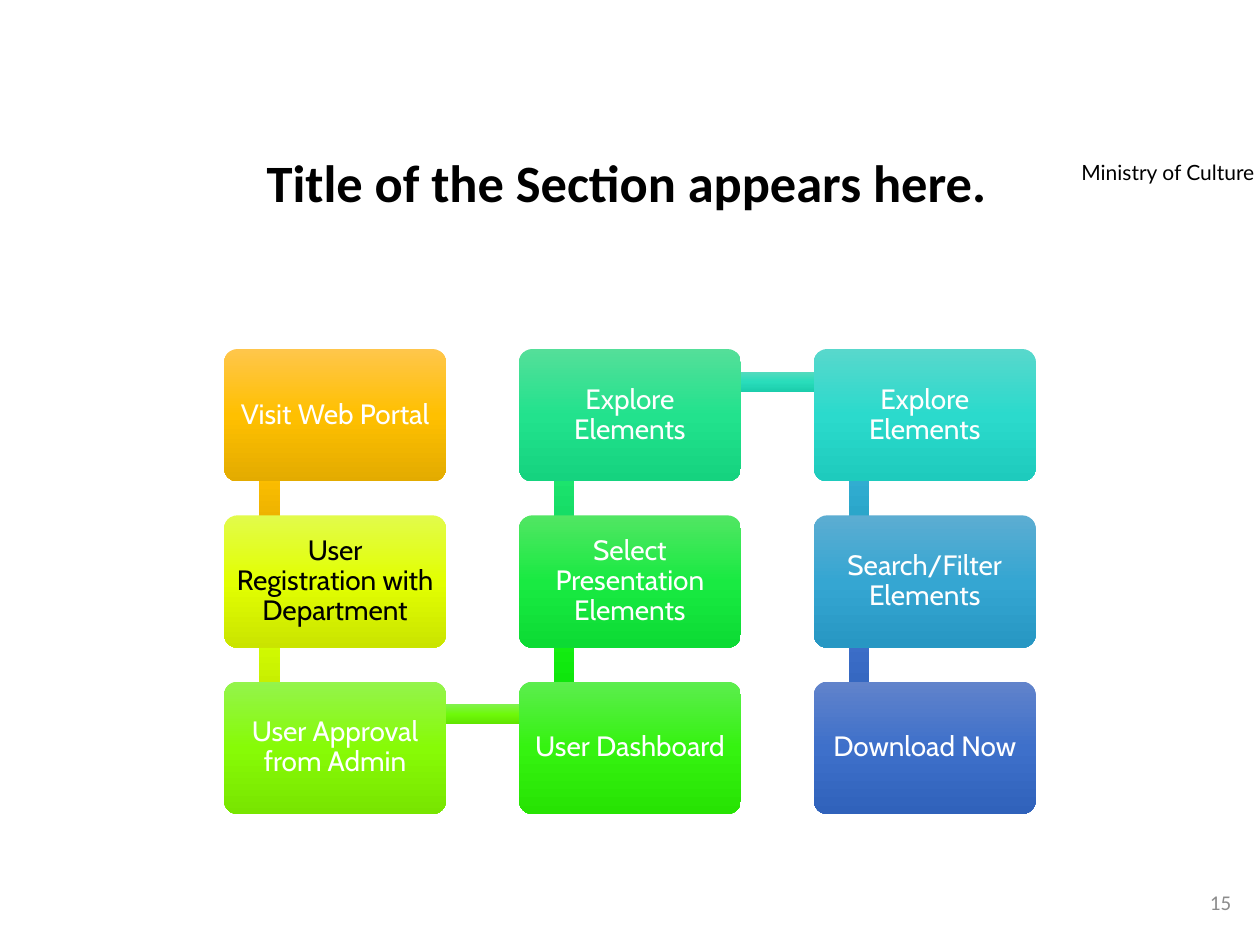
import copy
from dataclasses import dataclass

import pptx
import pptx.dml.color
import pptx.enum.shapes
import pptx.enum.text
import pptx.util

Inches = pptx.util.Inches
Align = pptx.enum.text.PP_ALIGN
Anchor = pptx.enum.text.MSO_ANCHOR
Shape = pptx.enum.shapes.MSO_SHAPE


@dataclass(frozen=True)
class Theme:
    heading_font: str = "Calibri"
    header_font: str = "Lato"
    step_font: str = "Cabin"
    heading_size: int = 30
    step_size: int = 16
    small_size: int = 12
    dark: str = "000000"
    light: str = "FFFFFF"
    muted: str = "8C8C8C"


THEME = Theme()

# Step grid, in inches
GRID_LEFT, GRID_TOP = 1.78, 2.77
COLUMN_PITCH, ROW_PITCH = 2.34, 1.32
STEP_WIDTH, STEP_HEIGHT = 1.76, 1.05
ROWS = 3
BAR_THICKNESS = 0.16

# Label, text colour, gradient from top to bottom
STEPS = [
    ("Visit Web Portal", THEME.light, ("FFC64B", "FFC000", "E3AB00")),
    ("User Registration with Department", THEME.dark, ("E2FB4B", "E2FF01", "CAE400")),
    ("User Approval from Admin", THEME.light, ("94F44C", "87FB06", "78E500")),
    ("User Dashboard", THEME.light, ("5CED4E", "35F310", "27E303")),
    ("Select Presentation Elements", THEME.light, ("51E663", "19EA42", "0CDB34")),
    ("Explore Elements", THEME.light, ("54DF99", "22E28D", "15D37F")),
    ("Explore Elements", THEME.light, ("58D8CC", "2BDACC", "1ECBBD")),
    ("Search/Filter Elements", THEME.light, ("5CADD2", "35A6D2", "2797C3")),
    ("Download Now", THEME.light, ("6183CB", "3E70CA", "3062BB")),
]
BAR_GRADIENTS = [
    ("FFC64B", "FFC000", "E3AB00"),
    ("D6FA4B", "D5FF01", "BEE400"),
    ("81F24D", "6EF909", "61E500"),
    ("50EA4F", "16EF14", "09E006"),
    ("52E281", "1EE66F", "11D660"),
    ("56DABE", "29DDBB", "1BCDAC"),
    ("5BB4D3", "33AFD3", "25A0C4"),
    ("6183CB", "3E70CA", "3062BB"),
]


def step_cell(index):
    """Column and row of a step; the path runs down, up, then down again."""
    column, offset = divmod(index, ROWS)
    return column, ROWS - 1 - offset if column % 2 else offset


def cell_corner(column, row):
    return GRID_LEFT + column * COLUMN_PITCH, GRID_TOP + row * ROW_PITCH


def write(frame, text, font, size, colour, align, bold=False, spacing=None):
    paragraph = frame.paragraphs[0]
    paragraph.alignment = align
    paragraph.line_spacing = spacing
    run = paragraph.add_run()
    run.text = text
    run.font.name = font
    run.font.size = pptx.util.Pt(size)
    run.font.bold = bold
    run.font.color.rgb = pptx.dml.color.RGBColor.from_string(colour)


def add_gradient_shape(slide, kind, box, colours):
    shape = slide.shapes.add_shape(kind, *map(Inches, box))
    shape.shadow.inherit = False
    shape.line.fill.background()
    shape.fill.gradient()
    shape.fill.gradient_angle = 270
    stop_list = shape._element.spPr.xpath("a:gradFill/a:gsLst")[0]
    stop_list.append(copy.deepcopy(stop_list[0]))
    for stop, position, colour in zip(shape.fill.gradient_stops, (0, 0.5, 1), colours):
        stop.position = position
        stop.color.rgb = pptx.dml.color.RGBColor.from_string(colour)
    return shape


def add_bar(slide, index, colours):
    """Bar from a step to the next, running behind both boxes."""
    (column, row), (next_column, next_row) = step_cell(index), step_cell(index + 1)
    left, top = cell_corner(min(column, next_column), min(row, next_row))
    if column == next_column:
        box = (left + 0.28, top + 0.26, BAR_THICKNESS, ROW_PITCH)
    else:
        box = (left + 0.37, top + 0.18, COLUMN_PITCH, BAR_THICKNESS)
    add_gradient_shape(slide, Shape.RECTANGLE, box, colours)


def add_step(slide, index, label, text_colour, colours):
    box = (*cell_corner(*step_cell(index)), STEP_WIDTH, STEP_HEIGHT)
    step = add_gradient_shape(slide, Shape.ROUNDED_RECTANGLE, box, colours)
    step.adjustments[0] = 0.1
    frame = step.text_frame
    frame.word_wrap = True
    frame.vertical_anchor = Anchor.MIDDLE
    frame.margin_left = frame.margin_right = Inches(0.06)
    frame.margin_top = frame.margin_bottom = Inches(0.07)
    write(frame, label, THEME.step_font, THEME.step_size, text_colour,
          Align.CENTER, spacing=0.9)


def add_small_text(slide, box, text, font, colour, align, anchor):
    frame = slide.shapes.add_textbox(*map(Inches, box)).text_frame
    frame.word_wrap = True
    frame.vertical_anchor = anchor
    write(frame, text, font, THEME.small_size, colour, align)


def set_title(slide, box, text):
    title = slide.shapes.title
    title.left, title.top, title.width, title.height = map(Inches, box)
    frame = title.text_frame
    frame.auto_size = pptx.enum.text.MSO_AUTO_SIZE.NONE
    frame.word_wrap = True
    frame.vertical_anchor = Anchor.TOP
    write(frame, text, THEME.heading_font, THEME.heading_size, THEME.dark,
          Align.CENTER, bold=True, spacing=0.9)


def main():
    deck = pptx.Presentation()
    deck.slide_width, deck.slide_height = Inches(10), Inches(7.5)
    slide = deck.slides.add_slide(deck.slide_layouts.get_by_name("Title Only"))

    set_title(slide, (1.26, 1.2, 7.43, 0.79), "Title of the Section appears here.")
    add_small_text(slide, (8.18, 1.22, 2.18, 0.3), "Ministry of Culture",
                   THEME.header_font, THEME.dark, Align.CENTER, Anchor.TOP)
    for index, colours in enumerate(BAR_GRADIENTS):
        add_bar(slide, index, colours)
    for index, step in enumerate(STEPS):
        add_step(slide, index, *step)
    add_small_text(slide, (7.62, 6.96, 2.25, 0.4), "15",
                   THEME.heading_font, THEME.muted, Align.RIGHT, Anchor.MIDDLE)

    deck.save("out.pptx")


if __name__ == "__main__":
    main()
